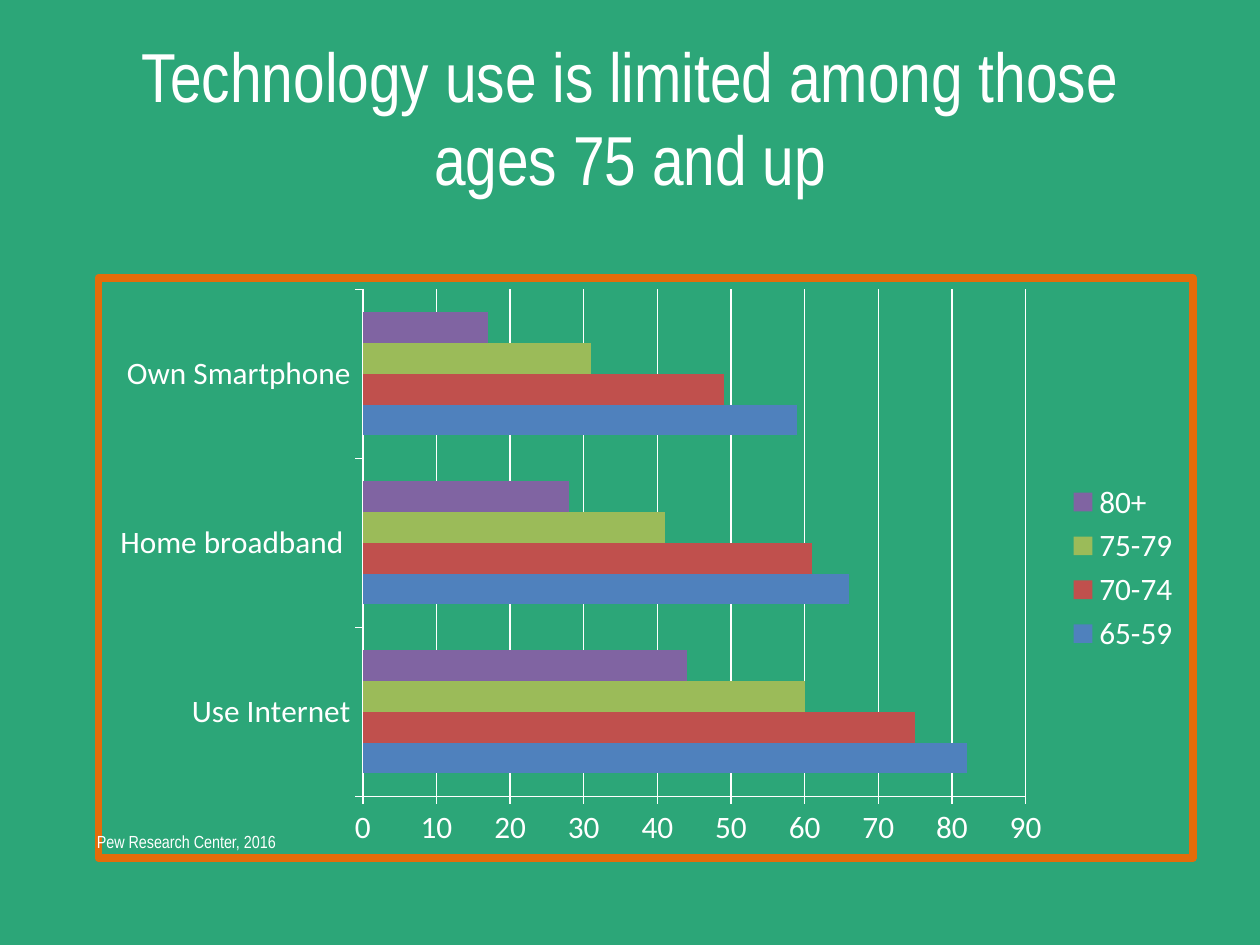
from typing import NamedTuple

from lxml.etree import SubElement
from pptx import Presentation
from pptx.chart.data import CategoryChartData
from pptx.dml.color import RGBColor
from pptx.enum.chart import XL_CHART_TYPE as ChartType, XL_LEGEND_POSITION as LegendPos
from pptx.enum.chart import XL_TICK_MARK as Tick
from pptx.enum.text import MSO_ANCHOR as Anchor, MSO_AUTO_SIZE as AutoSize, PP_ALIGN as Align
from pptx.oxml.ns import qn
from pptx.util import Inches, Pt

WIDTH, HEIGHT = 10, 7.5
GREEN, WHITE, ORANGE = "2CA678", "FFFFFF", "E46C0A"
CATEGORIES = ["Use Internet", "Home broadband ", "Own Smartphone"]


class Box(NamedTuple):
    """Left, top, width and height as shares of the slide's size."""
    x: float
    y: float
    w: float
    h: float

    def emu(self) -> list[int]:
        return [Inches(share * side) for share, side in zip(self, (WIDTH, HEIGHT) * 2)]


class AgeGroup(NamedTuple):
    name: str
    values: tuple[int, ...]
    color: str


AGE_GROUPS = [
    AgeGroup("65-59", (82, 66, 59), "4F81BD"),
    AgeGroup("70-74", (75, 61, 49), "C0504D"),
    AgeGroup("75-79", (60, 41, 31), "9BBB59"),
    AgeGroup("80+", (44, 28, 17), "8064A2"),
]
TITLE_BOX = Box(0.05, 0.04, 0.9, 1 / 6)
CHART_BOX = Box(0.075, 0.29, 0.875, 0.622)
SOURCE_BOX = Box(0.067, 0.873, 0.208, 0.036)


def rgb(color: str) -> RGBColor:
    return RGBColor.from_string(color)


def fill(fmt, color: str) -> None:
    fmt.solid()
    fmt.fore_color.rgb = rgb(color)


def style_font(font, name: str, size: float) -> None:
    for key, value in {"name": name, "size": Pt(size), "bold": False}.items():
        setattr(font, key, value)
    font.color.rgb = rgb(WHITE)


def write(sp, box: Box, text: str, size: float, align: Align) -> None:
    sp.left, sp.top, sp.width, sp.height = box.emu()
    tf = sp.text_frame
    tf.word_wrap = True
    p = tf.paragraphs[0]
    p.alignment = align
    r = p.add_run()
    r.text = text
    style_font(r.font, "Arial Narrow", size)


def add_border(chart, color: str, width: float) -> None:
    """Outline the whole chart area, which has no public line format."""
    space = chart.element
    sp_pr = SubElement(space, qn("c:spPr"))
    space.find(qn("c:chart")).addnext(sp_pr)
    SubElement(sp_pr, qn("a:noFill"))
    ln = SubElement(sp_pr, qn("a:ln"), w=str(Pt(width)))
    SubElement(SubElement(ln, qn("a:solidFill")), qn("a:srgbClr"), val=color)


def add_age_chart(s) -> None:
    data = CategoryChartData()
    data.categories = CATEGORIES
    for group in AGE_GROUPS:
        data.add_series(group.name, group.values)
    chart = s.shapes.add_chart(ChartType.BAR_CLUSTERED, *CHART_BOX.emu(), data).chart
    style_font(chart.font, "Calibri", 18)
    chart.has_title = False
    chart.has_legend = True
    chart.legend.position = LegendPos.RIGHT
    chart.legend.include_in_layout = False

    plot = chart.plots[0]
    plot.gap_width, plot.vary_by_categories = 150, False
    for series, group in zip(plot.series, AGE_GROUPS):
        fill(series.format.fill, group.color)

    value_axis, category_axis = chart.value_axis, chart.category_axis
    value_axis.has_major_gridlines = True
    for axis in (value_axis, category_axis):
        axis.major_tick_mark, axis.minor_tick_mark = Tick.OUTSIDE, Tick.NONE
    for line in (value_axis.format.line, category_axis.format.line,
                 value_axis.major_gridlines.format.line):
        fill(line.fill, WHITE)
        line.width = Pt(0.75)
    add_border(chart, ORANGE, 4.5)


def main() -> None:
    prs = Presentation()
    prs.slide_width, prs.slide_height = Inches(WIDTH), Inches(HEIGHT)
    s = prs.slides.add_slide(prs.slide_layouts[5])
    fill(s.background.fill, GREEN)

    title = s.shapes.title
    write(title, TITLE_BOX, "Technology use is limited among those ages 75 and up",
          39.6, Align.CENTER)
    title.text_frame.vertical_anchor = Anchor.MIDDLE
    title.text_frame.auto_size = AutoSize.NONE

    add_age_chart(s)

    source = s.shapes.add_textbox(*SOURCE_BOX.emu())
    write(source, SOURCE_BOX, "Pew Research Center, 2016", 10, Align.LEFT)
    source.text_frame.auto_size = AutoSize.SHAPE_TO_FIT_TEXT
    prs.save("out.pptx")


if __name__ == "__main__":
    main()
